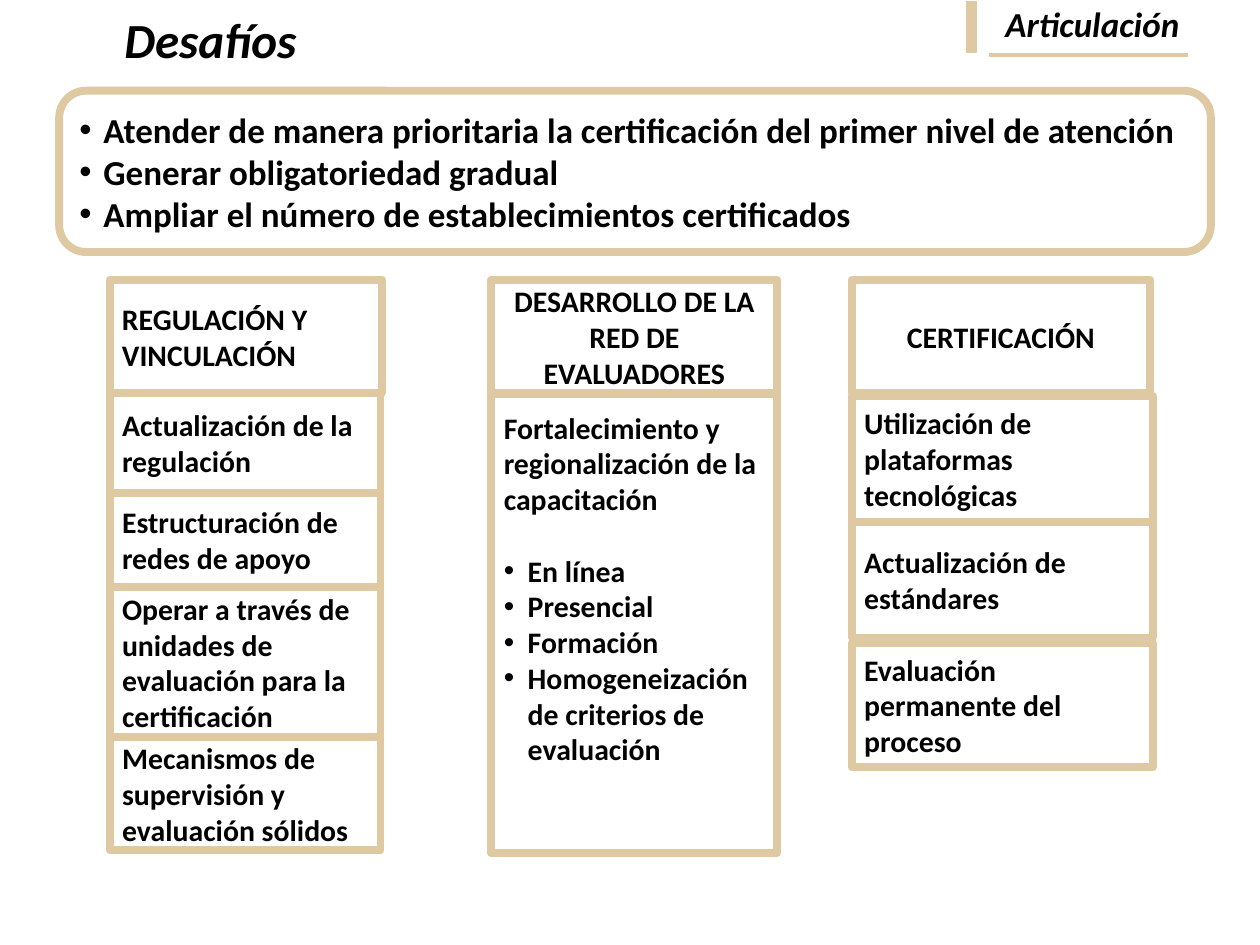
from lxml.etree import SubElement
from pptx import Presentation
from pptx.dml.color import RGBColor
from pptx.enum.shapes import MSO_CONNECTOR, MSO_SHAPE
from pptx.enum.text import MSO_ANCHOR, MSO_AUTO_SIZE, PP_ALIGN
from pptx.oxml.ns import qn
from pptx.util import Inches, Pt

COLORS = {"sand": "DEC9A2", "ink": "000000"}
FONT = "Calibri"
GRID_COLUMNS, GRID_ROWS = 100, 75
BULLET_INDENT = Inches(0.19)

HEADERS = [
    (8.7, 21.6, "REGULACIÓN Y VINCULACIÓN", PP_ALIGN.LEFT),
    (39, 22.7, "DESARROLLO DE LA RED DE EVALUADORES", PP_ALIGN.CENTER),
    (67.6, 23.7, "CERTIFICACIÓN", PP_ALIGN.CENTER),
]
STACKS = [
    (8.7, 21.5, [
        (31.2, 7.9, "Actualización de la regulación"),
        (39.1, 7.5, "Estructuración de redes de apoyo"),
        (46.6, 11.9, "Operar a través de unidades de evaluación para la certificación"),
        (58.5, 9, "Mecanismos de supervisión y evaluación sólidos"),
    ]),
    (67.6, 23.9, [
        (31.4, 10, "Utilización de plataformas tecnológicas"),
        (41.4, 9.2, "Actualización de estándares"),
        (51, 9.9, "Evaluación permanente del proceso"),
    ]),
]
TRAINING = "Fortalecimiento y regionalización de la capacitación"
TRAINING_MODES = [
    "En línea",
    "Presencial",
    "Formación",
    "Homogeneización de criterios de evaluación",
]
CHALLENGES = [
    "Atender de manera prioritaria la certificación del primer nivel de atención",
    "Generar obligatoriedad gradual",
    "Ampliar el número de establecimientos certificados",
]


class SlideBuilder:
    def __init__(self, presentation):
        self.slide = presentation.slides.add_slide(presentation.slide_layouts[6])
        self.column = presentation.slide_width / GRID_COLUMNS
        self.row = presentation.slide_height / GRID_ROWS

    def place(self, left, top, width, height):
        return (round(left * self.column), round(top * self.row),
                round(width * self.column), round(height * self.row))

    def set_text(self, shape, lines, size, align=PP_ALIGN.LEFT, bullets_from=None, italic=False):
        text_frame = shape.text_frame
        text_frame.word_wrap = True
        text_frame.text = "\n".join(lines)
        for index, paragraph in enumerate(text_frame.paragraphs):
            paragraph.alignment = align
            if bullets_from is not None and index >= bullets_from:
                self.add_bullet(paragraph)
            for run in paragraph.runs:
                run.font.name = FONT
                run.font.size = Pt(size)
                run.font.bold = True
                run.font.italic = italic
                run.font.color.rgb = RGBColor.from_string(COLORS["ink"])
        return text_frame

    def add_bullet(self, paragraph):
        properties = paragraph._p.get_or_add_pPr()
        properties.set("marL", str(BULLET_INDENT))
        properties.set("indent", str(-BULLET_INDENT))
        SubElement(properties, qn("a:buFont")).set("typeface", "Arial")
        SubElement(properties, qn("a:buChar")).set("char", "•")

    def box(self, area, lines, size=17, align=PP_ALIGN.LEFT, bullets_from=None,
            kind=MSO_SHAPE.RECTANGLE):
        shape = self.slide.shapes.add_shape(kind, *self.place(*area))
        shape.shadow.inherit = False
        shape.fill.background()
        shape.line.color.rgb = RGBColor.from_string(COLORS["sand"])
        shape.line.width = Pt(4.5)
        text_frame = self.set_text(shape, lines, size, align, bullets_from)
        text_frame.vertical_anchor = MSO_ANCHOR.MIDDLE
        return text_frame

    def title(self, area, text, size):
        shape = self.slide.shapes.add_textbox(*self.place(*area))
        text_frame = self.set_text(shape, [text], size, PP_ALIGN.CENTER, italic=True)
        text_frame.auto_size = MSO_AUTO_SIZE.SHAPE_TO_FIT_TEXT

    def line(self, start, end, width):
        begin_x, begin_y, end_x, end_y = self.place(*start, *end)
        connector = self.slide.shapes.add_connector(
            MSO_CONNECTOR.STRAIGHT, begin_x, begin_y, end_x, end_y)
        connector.line.color.rgb = RGBColor.from_string(COLORS["sand"])
        connector.line.width = Pt(width)
        SubElement(connector._element.spPr, qn("a:effectLst"))


def main():
    presentation = Presentation()
    presentation.slide_width = Inches(10)
    presentation.slide_height = Inches(7.5)
    builder = SlideBuilder(presentation)

    for left, width, text, align in HEADERS:
        builder.box((left, 22.2, width, 9), [text], align=align)
    for left, width, cells in STACKS:
        for top, height, text in cells:
            builder.box((left, top, width, height), [text])

    training = builder.box((39, 31.3, 22.7, 36.4), [TRAINING, *TRAINING_MODES], bullets_from=1)
    training.vertical_anchor = MSO_ANCHOR.TOP
    training.margin_top = Inches(0.12)
    training.paragraphs[1].space_before = Pt(20.5)

    builder.box((4.7, 7.2, 91.4, 12.8), CHALLENGES, size=20, bullets_from=0,
                kind=MSO_SHAPE.ROUNDED_RECTANGLE)
    builder.line((78.5, 4.4), (94.3, 4.4), 2.25)
    builder.line((77.1, 0.1), (77.1, 4.2), 6)
    builder.title((77.1, -0.3, 19.2, 4.4), "Articulación", 20)
    builder.title((5.5, 0.3, 22.4, 5.7), "Desafíos", 28)

    presentation.save("out.pptx")


if __name__ == "__main__":
    main()
